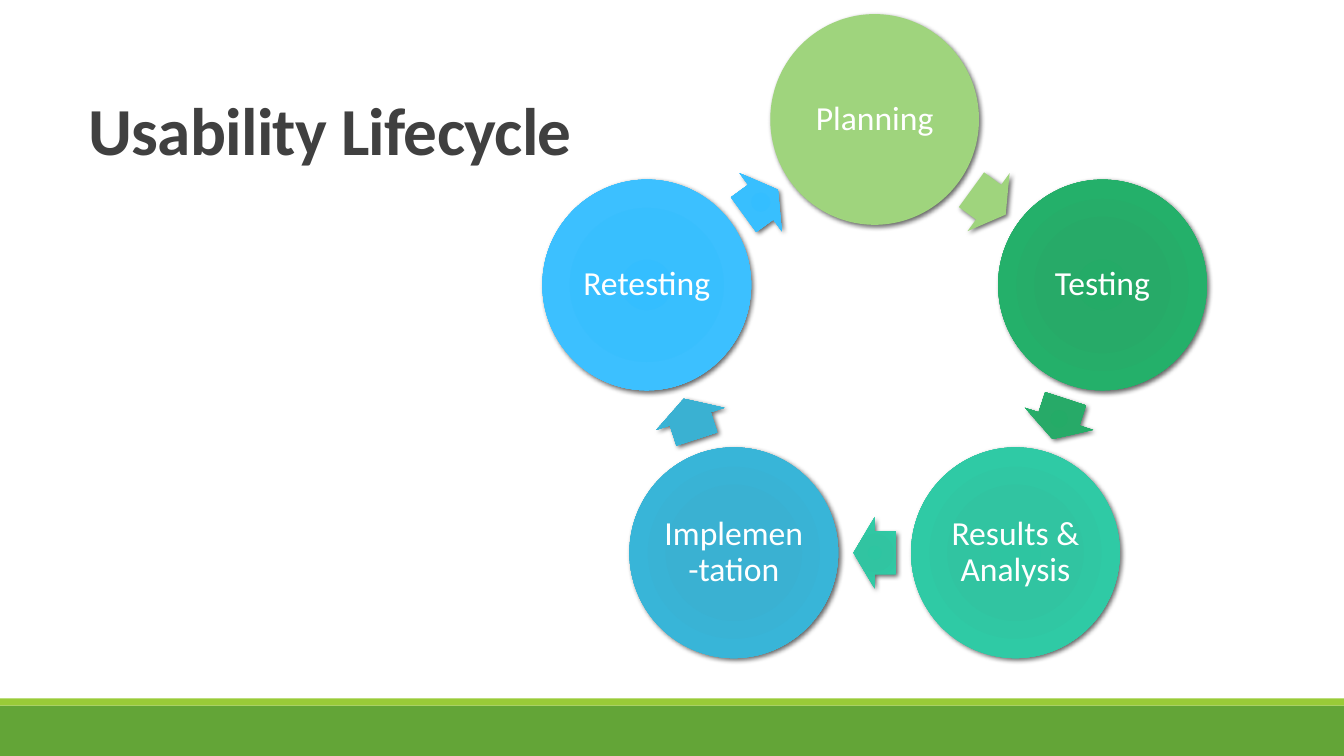
from dataclasses import dataclass
from math import cos, pi, sin

from pptx import Presentation
from pptx.dml.color import RGBColor
from pptx.enum.shapes import MSO_SHAPE
from pptx.enum.text import MSO_ANCHOR, PP_ALIGN
from pptx.oxml import parse_xml
from pptx.oxml.ns import nsdecls
from pptx.util import Inches, Pt


@dataclass(frozen=True)
class Theme:
    font: str = "Calibri"
    title_size: int = 48
    stage_size: int = 24
    title_color: str = "404040"
    stage_color: str = "FFFFFF"
    footer: str = "63A537"
    footer_edge: str = "99CB38"
    gradient_stops: tuple = (0, 34, 70, 100)


THEME = Theme()
WIDTH, HEIGHT = 13.33, 7.5

STAGES = (
    ("Planning", ("9FD47D",)),
    ("Testing", ("24AB67", "27AA68", "24B06A", "31AD6F")),
    ("Results & Analysis", ("2EC5A1", "31C4A1", "2FCAA5", "3EC7A6")),
    ("Implemen-tation", ("37B1D3", "3AB1D2", "38B5D8", "48B7D5")),
    ("Retesting", ("34BEFF", "38BFFE", "3CC0FF", "4BC5FF")),
)


def set_values(target, values):
    for name, value in values.items():
        setattr(target, name, value)


def write_text(shape, text, frame_values, para_values, font_values, color):
    frame = shape.text_frame
    set_values(frame, {"word_wrap": True, **frame_values})
    para = frame.paragraphs[0]
    set_values(para, para_values)
    span = para.add_run()
    span.text = text
    set_values(span.font, {"name": THEME.font, **font_values})
    span.font.color.rgb = RGBColor.from_string(color)
    return span


def add_filled(page, kind, box, colors):
    shape = page.shapes.add_shape(kind, *map(Inches, box))
    shape.shadow.inherit = False
    shape.line.fill.background()
    if len(colors) == 1:
        shape.fill.solid()
        shape.fill.fore_color.rgb = RGBColor.from_string(colors[0])
    else:
        apply_gradient(shape, colors)
    return shape


def apply_gradient(shape, colors):
    stops = "".join(
        f'<a:gs pos="{stop * 1000}"><a:srgbClr val="{color}"/></a:gs>'
        for stop, color in zip(THEME.gradient_stops, colors)
    )
    gradient = parse_xml(
        f'<a:gradFill {nsdecls("a")} rotWithShape="1"><a:gsLst>{stops}</a:gsLst>'
        '<a:path path="circle"><a:fillToRect l="100000" t="100000" '
        'r="100000" b="100000"/></a:path></a:gradFill>'
    )
    shape.fill.background()
    properties = shape._element.spPr
    empty_fill = properties.find("a:noFill", properties.nsmap)
    properties.replace(empty_fill, gradient)


def cast_shadow(shape):
    properties = shape._element.spPr
    properties.find("a:effectLst", properties.nsmap).append(parse_xml(
        f'<a:outerShdw {nsdecls("a")} blurRad="{Pt(3.5)}" dist="{Pt(2)}" '
        'dir="2700000" algn="tl" rotWithShape="0"><a:srgbClr val="000000">'
        '<a:alpha val="60000"/></a:srgbClr></a:outerShdw>'
    ))


def centered_box(center, radius, angle, width, height):
    x = center[0] + radius * sin(angle)
    y = center[1] - radius * cos(angle)
    return x - width / 2, y - height / 2, width, height


def draw_footer(page, box):
    left, top, width, height = box
    edge = 0.07
    add_filled(page, MSO_SHAPE.RECTANGLE,
               (left, top + edge, width, height - edge), (THEME.footer,))
    add_filled(page, MSO_SHAPE.RECTANGLE,
               (left, top, width, edge), (THEME.footer_edge,))


def draw_title(page, box, text):
    title = page.shapes.add_textbox(*map(Inches, box))
    span = write_text(
        title, text,
        {"vertical_anchor": MSO_ANCHOR.BOTTOM},
        {"line_spacing": 0.85},
        {"size": Pt(THEME.title_size), "bold": True},
        THEME.title_color,
    )
    span._r.get_or_add_rPr().set("spc", "-50")


def draw_cycle(page, box, stages):
    left, top, width, height = box
    circle_width, circle_height = 2.07, 2.09
    step = 2 * pi / len(stages)
    radius = (width - circle_width) / (2 * sin(step))
    center = left + width / 2, top + circle_height / 2 + radius
    margins = {f"margin_{side}": Inches(0.03)
               for side in ("left", "top", "right", "bottom")}
    for index, (label, colors) in enumerate(stages):
        angle = index * step
        circle = add_filled(
            page, MSO_SHAPE.OVAL,
            centered_box(center, radius, angle, circle_width, circle_height), colors)
        cast_shadow(circle)
        write_text(
            circle, label,
            {"vertical_anchor": MSO_ANCHOR.MIDDLE, **margins},
            {"alignment": PP_ALIGN.CENTER, "line_spacing": 0.9},
            {"size": Pt(THEME.stage_size)},
            THEME.stage_color,
        )
        middle = angle + step / 2
        arrow = add_filled(
            page, MSO_SHAPE.RIGHT_ARROW,
            centered_box(center, radius * cos(step / 2), middle, 0.42, 0.71), colors)
        arrow.adjustments[0], arrow.adjustments[1] = 0.6, 0.5
        arrow.rotation = round(middle * 180 / pi)
        cast_shadow(arrow)


def main():
    deck = Presentation()
    set_values(deck, {"slide_width": Inches(WIDTH), "slide_height": Inches(HEIGHT)})
    page = deck.slides.add_slide(deck.slide_layouts[6])
    draw_footer(page, (0, 6.93, WIDTH, HEIGHT - 6.93))
    draw_title(page, (0.78, 0.14, 11, 1.59), "Usability Lifecycle")
    draw_cycle(page, (5.38, 0.14, 6.59, 6.39), STAGES)
    deck.save("out.pptx")


if __name__ == "__main__":
    main()
